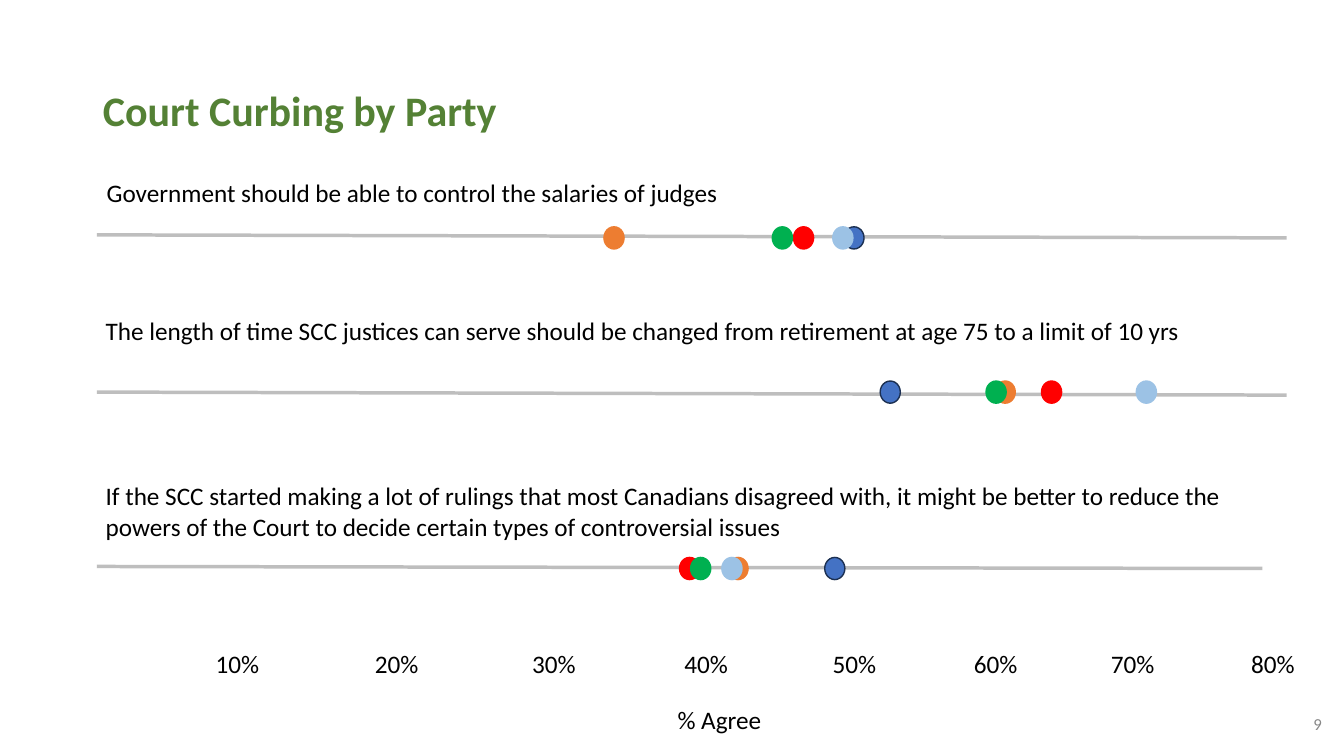
from dataclasses import dataclass

import pptx
import pptx.dml.color
import pptx.enum.shapes
import pptx.enum.text
import pptx.oxml.ns
import pptx.slide
import pptx.text.text
import pptx.util
from lxml import etree
from pptx.dml.color import RGBColor
from pptx.enum.text import MSO_ANCHOR, PP_ALIGN
from pptx.util import Inches

FONT = "Calibri"
TITLE_GREEN = RGBColor(0x54, 0x81, 0x35)
BLACK = RGBColor(0x00, 0x00, 0x00)
PAGE_GREY = RGBColor(0x88, 0x88, 0x88)
AXIS_GREY = RGBColor(0x7F, 0x7F, 0x7F)
BLUE = RGBColor(0x44, 0x72, 0xC4)
NAVY = RGBColor(0x1C, 0x30, 0x52)
RED = RGBColor(0xFF, 0x00, 0x00)
ORANGE = RGBColor(0xED, 0x7D, 0x31)
LIGHT_BLUE = RGBColor(0x9C, 0xC2, 0xE5)
GREEN = RGBColor(0x00, 0xB0, 0x50)

# Fill and outline of each party, from back to front
PARTY_COLORS = (
    (BLUE, NAVY),
    (RED, RED),
    (ORANGE, ORANGE),
    (LIGHT_BLUE, LIGHT_BLUE),
    (GREEN, GREEN),
)
DOT_WIDTH, DOT_HEIGHT = 0.2, 0.22
AXIS_LEFT = 0.96
TICK_LEFTS = (2.04, 3.62, 5.18, 6.69, 8.16, 9.56, 10.92, 12.31)


@dataclass(frozen=True)
class Frame:
    left: float
    top: float
    width: float
    height: float

    def lengths(self) -> tuple[int, int, int, int]:
        return (Inches(self.left), Inches(self.top),
                Inches(self.width), Inches(self.height))


@dataclass(frozen=True)
class Question:
    wording: str
    frame: Frame
    axis_start: float
    axis_right: float
    axis_end: float
    dot_top: float
    dot_lefts: tuple[float, ...]  # in the order of PARTY_COLORS


QUESTIONS = (
    Question("Government should be able to control the salaries of judges",
             Frame(0.96, 1.71, 8.54, 0.4), 2.33, 12.76, 2.36,
             2.25, (8.37, 7.87, 5.99, 8.26, 7.66)),
    Question("The length of time SCC justices can serve should be changed "
             "from retirement at age 75 to a limit of 10 yrs",
             Frame(0.95, 3.08, 11.8, 0.71), 3.89, 12.76, 3.92,
             3.78, (8.73, 10.33, 9.87, 11.27, 9.78)),
    Question("If the SCC started making a lot of rulings that most Canadians "
             "disagreed with, it might be better to reduce the powers of the "
             "Court to decide certain types of controversial issues",
             Frame(0.95, 4.72, 11.8, 0.71), 5.62, 12.52, 5.64,
             5.53, (8.18, 6.74, 7.22, 7.16, 6.85)),
)


def format_paragraph(para: pptx.text.text._Paragraph, size: float,
                     color: RGBColor, align: PP_ALIGN) -> None:
    para.alignment = align
    para.font.name = FONT
    para.font.size = pptx.util.Pt(size)
    para.font.color.rgb = color


def add_title(page: pptx.slide.Slide, wording: str, frame: Frame) -> None:
    title = page.shapes.title
    title.left, title.top, title.width, title.height = frame.lengths()
    title.text_frame.text = wording
    title.text_frame.auto_size = pptx.enum.text.MSO_AUTO_SIZE.NONE
    title.text_frame.vertical_anchor = MSO_ANCHOR.MIDDLE
    para = title.text_frame.paragraphs[0]
    format_paragraph(para, 30, TITLE_GREEN, PP_ALIGN.LEFT)
    para.font.bold = True
    para.line_spacing = 0.9


def add_label(page: pptx.slide.Slide, wording: str, frame: Frame,
              size: float = 18, color: RGBColor = BLACK,
              align: PP_ALIGN = PP_ALIGN.LEFT,
              anchor: MSO_ANCHOR = MSO_ANCHOR.TOP) -> None:
    box = page.shapes.add_textbox(*frame.lengths())
    box.text_frame.word_wrap = True
    box.text_frame.vertical_anchor = anchor
    box.text_frame.text = wording
    format_paragraph(box.text_frame.paragraphs[0], size, color, align)


def add_axis(page: pptx.slide.Slide, question: Question) -> None:
    """Draw the half-transparent scale line of a question."""
    axis = page.shapes.add_connector(
        pptx.enum.shapes.MSO_CONNECTOR.STRAIGHT,
        Inches(AXIS_LEFT), Inches(question.axis_start),
        Inches(question.axis_right), Inches(question.axis_end))
    axis.line.width = pptx.util.Pt(2.5)
    axis.line.color.rgb = AXIS_GREY
    qn = pptx.oxml.ns.qn
    properties = axis._element.spPr
    color = properties.find(".//" + qn("a:srgbClr"))
    etree.SubElement(color, qn("a:alpha"), val="50000")
    etree.SubElement(properties, qn("a:effectLst"))


def add_dot(page: pptx.slide.Slide, frame: Frame,
            fill: RGBColor, outline: RGBColor) -> None:
    dot = page.shapes.add_shape(pptx.enum.shapes.MSO_SHAPE.OVAL,
                                *frame.lengths())
    dot.shadow.inherit = False
    dot.fill.solid()
    dot.fill.fore_color.rgb = fill
    dot.line.color.rgb = outline
    dot.line.width = pptx.util.Pt(1)


def add_question(page: pptx.slide.Slide, question: Question) -> None:
    add_axis(page, question)
    for left, (fill, outline) in zip(question.dot_lefts, PARTY_COLORS):
        frame = Frame(left, question.dot_top, DOT_WIDTH, DOT_HEIGHT)
        add_dot(page, frame, fill, outline)
    add_label(page, question.wording, question.frame)


def main() -> None:
    deck = pptx.Presentation()
    deck.slide_width, deck.slide_height = Inches(13.33), Inches(7.5)
    page = deck.slides.add_slide(deck.slide_layouts.get_by_name("Title Only"))

    add_title(page, "Court Curbing by Party", Frame(0.92, 0.4, 11.5, 1.45))
    for question in QUESTIONS:
        add_question(page, question)
    for step, left in enumerate(TICK_LEFTS, start=1):
        add_label(page, f"{step * 10}%", Frame(left, 6.38, 0.72, 0.4))
    add_label(page, "% Agree", Frame(5.99, 6.94, 2.29, 0.4),
              align=PP_ALIGN.CENTER)
    add_label(page, "9", Frame(10.21, 6.98, 3, 0.4), 12, PAGE_GREY,
              PP_ALIGN.RIGHT, MSO_ANCHOR.MIDDLE)
    deck.save("out.pptx")


if __name__ == "__main__":
    main()
